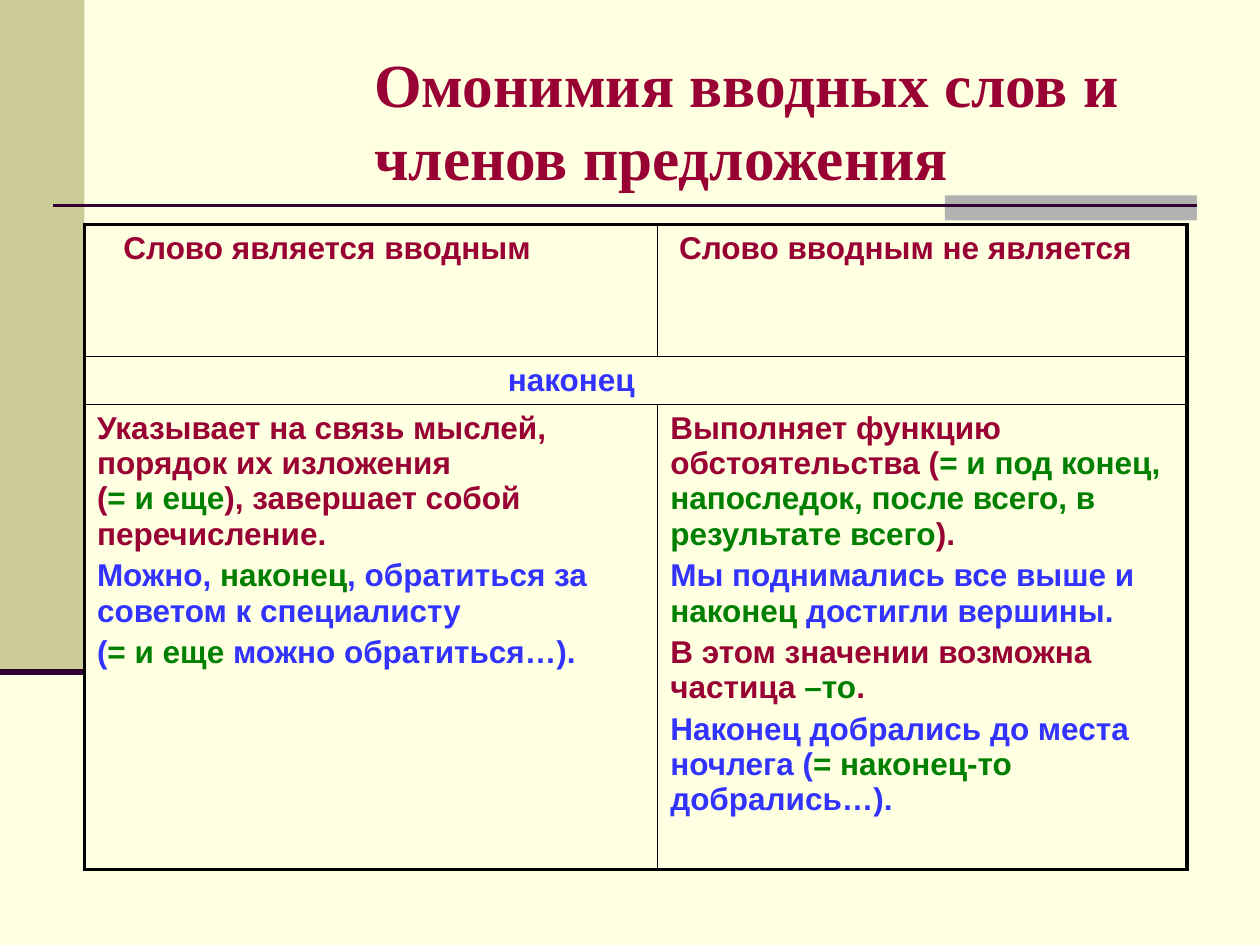
from lxml.etree import SubElement
from pptx import Presentation
from pptx.dml.color import RGBColor
from pptx.enum.shapes import MSO_CONNECTOR, MSO_SHAPE
from pptx.enum.text import MSO_ANCHOR, MSO_AUTO_SIZE, PP_ALIGN
from pptx.oxml.ns import qn
from pptx.util import Inches, Pt

COLORS = {
    "paper": "FFFFE1", "olive": "CCCC99", "gray": "B2B2B2", "plum": "330033",
    "rule": "990033", "example": "3333FF", "key": "008000", "border": "000000",
}
INTRODUCTORY = [
    [("Указывает на связь мыслей, порядок их изложения\v(", "rule"), ("= и еще", "key"),
     ("), завершает собой перечисление.", "rule")],
    [("Можно, ", "example"), ("наконец", "key"),
     (", обратиться за советом к специалисту", "example")],
    [("(", "example"), ("= и еще", "key"), (" можно обратиться…).", "example")],
]
ADVERBIAL = [
    [("Выполняет функцию обстоятельства (", "rule"),
     ("= и под конец, напоследок, после всего, в результате всего", "key"), (").", "rule")],
    [("Мы поднимались все выше и ", "example"), ("наконец ", "key"),
     ("достигли вершины.", "example")],
    [("В этом значении возможна частица ", "rule"), ("–то", "key"), (".", "rule")],
    [("Наконец добрались до места ночлега (", "example"), ("= наконец-то", "key"),
     (" добрались…).", "example")],
]


def color(name):
    """Return the named palette colour."""
    return RGBColor.from_string(COLORS[name])


class SlideBuilder:
    """Hold the slide and its style, and add each kind of element."""

    def __init__(self, slide):
        """Keep the slide and paint its background."""
        self.slide = slide
        slide.background.fill.solid()
        slide.background.fill.fore_color.rgb = color("paper")

    def block(self, left, top, width, height, fill):
        """Add a plain filled rectangle."""
        block = self.slide.shapes.add_shape(
            MSO_SHAPE.RECTANGLE, Inches(left), Inches(top), Inches(width), Inches(height))
        block.shadow.inherit = False
        block.fill.solid()
        block.fill.fore_color.rgb = color(fill)
        block.line.fill.background()

    def rule(self, left, right, y, weight):
        """Add a horizontal line."""
        rule = self.slide.shapes.add_connector(
            MSO_CONNECTOR.STRAIGHT, Inches(left), Inches(y), Inches(right), Inches(y))
        rule.line.color.rgb = color("plum")
        rule.line.width = Pt(weight)
        SubElement(rule._element.spPr, qn("a:effectLst"))

    def run(self, paragraph, text, ink, size, font):
        """Add a bold run, breaking lines at vertical tabs."""
        for index, part in enumerate(text.split("\v")):
            if index:
                paragraph.add_line_break()
            run = paragraph.add_run()
            run.text = part
            run.font.name, run.font.size, run.font.bold = font, Pt(size), True
            run.font.color.rgb = color(ink)

    def title(self, text, left, top, width, height):
        """Place and fill the title placeholder."""
        title = self.slide.shapes.title
        title.left, title.top = Inches(left), Inches(top)
        title.width, title.height = Inches(width), Inches(height)
        frame = title.text_frame
        frame.auto_size = MSO_AUTO_SIZE.NONE
        frame.word_wrap = True
        frame.vertical_anchor = MSO_ANCHOR.MIDDLE
        frame.paragraphs[0].alignment = PP_ALIGN.LEFT
        self.run(frame.paragraphs[0], text, "rule", 35, "Times New Roman")

    def table(self, left, top, columns, rows):
        """Add an unfilled table with the given column widths and row heights."""
        table = self.slide.shapes.add_table(
            len(rows), len(columns), Inches(left), Inches(top),
            Inches(sum(columns)), Inches(sum(rows))).table
        table.first_row = table.horz_banding = False
        for column, width in zip(table.columns, columns):
            column.width = Inches(width)
        for row, height in zip(table.rows, rows):
            row.height = Inches(height)
        return table

    def borders(self, cell, outer):
        """Draw the cell's four borders, thick on the outer sides."""
        properties = cell._tc.get_or_add_tcPr()
        for side in "LRTB":
            weight = Pt(2.25 if side in outer else 1)
            line = SubElement(properties, qn(f"a:ln{side}"), w=str(weight))
            fill = SubElement(line, qn("a:solidFill"))
            SubElement(fill, qn("a:srgbClr"), val=COLORS["border"])

    def cell(self, table, row, column, paragraphs, indent=0, span=1):
        """Fill one cell with paragraphs of coloured runs."""
        cell = table.cell(row, column)
        if span > 1:
            cell.merge(table.cell(row, column + span - 1))
        edges = {"L": column == 0, "R": column + span == len(table.columns),
                 "T": row == 0, "B": row + 1 == len(table.rows)}
        self.borders(cell, [side for side, is_outer in edges.items() if is_outer])
        cell.fill.background()
        for index, runs in enumerate(paragraphs):
            frame = cell.text_frame
            paragraph = frame.add_paragraph() if index else frame.paragraphs[0]
            paragraph.space_before = Pt(3.6)
            paragraph._p.get_or_add_pPr().set("marL", str(Inches(indent)))
            for text, ink in runs:
                self.run(paragraph, text, ink, 18, "Arial")


def main():
    """Build and save the slide."""
    deck = Presentation()
    deck.slide_width, deck.slide_height = Inches(10), Inches(7.5)
    builder = SlideBuilder(deck.slides.add_slide(deck.slide_layouts[5]))
    builder.block(0, 0, 0.67, 5.33, "olive")
    builder.block(7.5, 1.55, 2, 0.2, "gray")
    builder.rule(0.42, 9.5, 1.63, 1.5)
    builder.rule(0, 0.67, 5.33, 3.5)
    builder.title("Омонимия вводных слов и членов предложения", 2.87, 0.36, 6.7, 1.18)

    comparison = builder.table(0.67, 1.78, [4.55, 4.2], [1.05, 0.38, 3.69])
    builder.cell(comparison, 0, 0, [[("Слово является вводным", "rule")]], indent=0.21)
    builder.cell(comparison, 0, 1, [[("Слово вводным не является", "rule")]], indent=0.07)
    builder.cell(comparison, 1, 0, [[("наконец", "example")]], indent=3.26, span=2)
    builder.cell(comparison, 2, 0, INTRODUCTORY)
    builder.cell(comparison, 2, 1, ADVERBIAL)
    deck.save("out.pptx")


if __name__ == "__main__":
    main()
